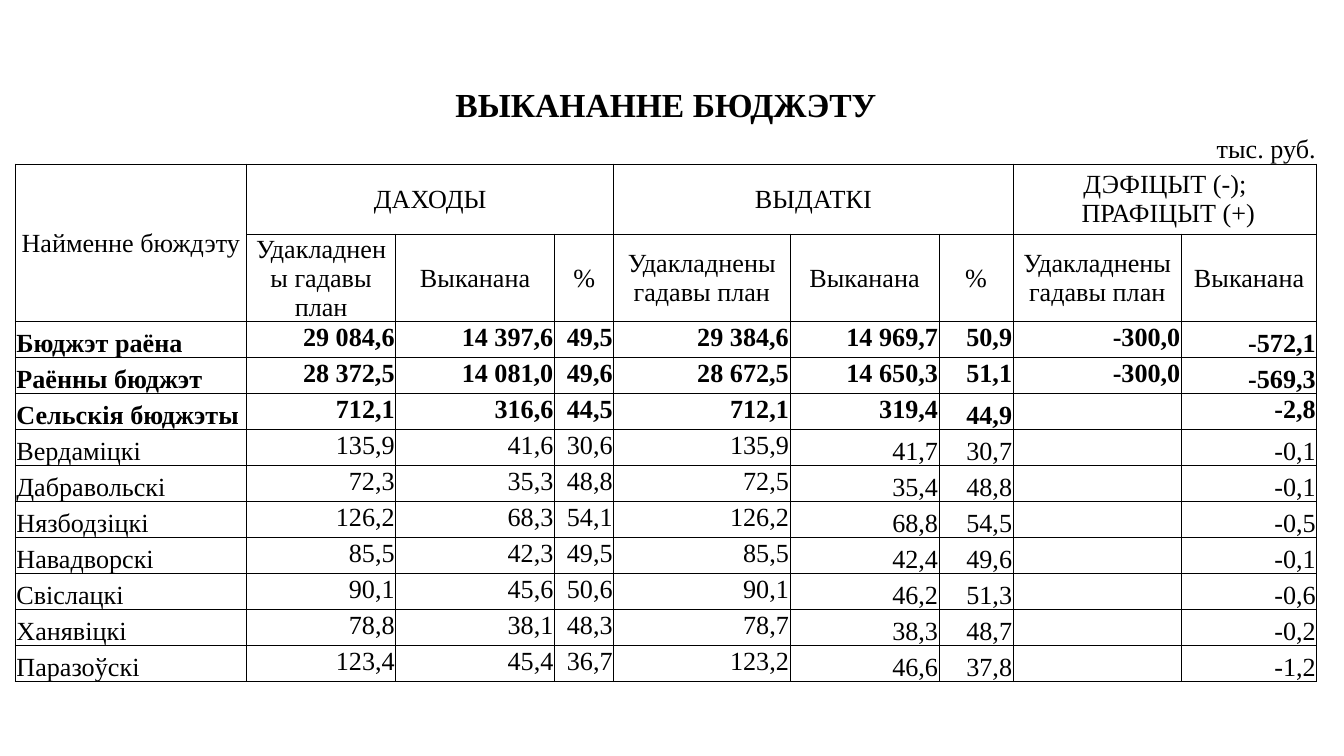
from dataclasses import dataclass

from lxml import etree
from pptx import Presentation
from pptx.dml.color import RGBColor
from pptx.enum.text import MSO_ANCHOR, PP_ALIGN
from pptx.oxml.ns import qn
from pptx.table import Table, _Cell
from pptx.util import Cm, Pt

TOP, MIDDLE, BOTTOM = MSO_ANCHOR.TOP, MSO_ANCHOR.MIDDLE, MSO_ANCHOR.BOTTOM
LEFT, CENTER, RIGHT = PP_ALIGN.LEFT, PP_ALIGN.CENTER, PP_ALIGN.RIGHT

COLORS = {"text": "000000", "border": "000000"}
FONT = "Times New Roman"
TITLE_SIZE, BODY_SIZE = 18, 14
ALL_SIDES = ("lnL", "lnR", "lnT", "lnB")

COLUMN_WIDTHS = (4.37, 2.54, 0.28, 1.98, 1.02, 1.12, 3.33, 2.26, 0.56, 1.4, 3.18, 0.3, 2.26)
TITLE_ROW, UNIT_ROW, GROUP_ROW, HEADING_ROW, FIRST_BUDGET_ROW = range(5)
HEADER_HEIGHTS = (0.87, 0.68, 1.32, 1.6)
BUDGET_HEIGHT = 0.68
FIELD_SPANS = ((0, 0), (1, 2), (3, 4), (5, 5), (6, 6), (7, 8), (9, 9), (10, 10), (11, 12))
UNIT_SPANS = ((2, 3), (4, 5), (8, 9), (10, 11))

PLAN, DONE = "Удакладнены гадавы план", "Выканана"
HEADINGS = (PLAN, DONE, "%", PLAN, DONE, "%", PLAN, DONE)
GROUPS = (
    ("ДАХОДЫ", 1, 5),
    ("ВЫДАТКІ", 6, 9),
    ("ДЭФІЦЫТ (-);\n ПРАФІЦЫТ (+)", 10, 12),
)


@dataclass
class Budget:
    name: str
    values: tuple[str, ...]
    bold: bool = False
    bottom_fields: tuple[int, ...] = (5, 6, 8)


BUDGETS = (
    Budget("Бюджэт раёна", ("29 084,6", "14 397,6", "49,5", "29 384,6", "14 969,7", "50,9", "-300,0", "-572,1"), True, (8,)),
    Budget("Раённы бюджэт", ("28 372,5", "14 081,0", "49,6", "28 672,5", "14 650,3", "51,1", "-300,0", "-569,3"), True, (8,)),
    Budget("Сельскія бюджэты", ("712,1", "316,6", "44,5", "712,1", "319,4", "44,9", "", "-2,8"), True, (6,)),
    Budget("Вердаміцкі", ("135,9", "41,6", "30,6", "135,9", "41,7", "30,7", "", "-0,1")),
    Budget("Дабравольскі", ("72,3", "35,3", "48,8", "72,5", "35,4", "48,8", "", "-0,1")),
    Budget("Нязбодзіцкі", ("126,2", "68,3", "54,1", "126,2", "68,8", "54,5", "", "-0,5")),
    Budget("Навадворскі", ("85,5", "42,3", "49,5", "85,5", "42,4", "49,6", "", "-0,1")),
    Budget("Свіслацкі", ("90,1", "45,6", "50,6", "90,1", "46,2", "51,3", "", "-0,6")),
    Budget("Ханявіцкі", ("78,8", "38,1", "48,3", "78,7", "38,3", "48,7", "", "-0,2")),
    Budget("Паразоўскі", ("123,4", "45,4", "36,7", "123,2", "46,6", "37,8", "", "-1,2")),
)


def set_borders(cell: _Cell, visible_sides: tuple[str, ...]) -> None:
    properties = cell._tc.get_or_add_tcPr()
    for side in ALL_SIDES:
        line = etree.SubElement(properties, qn(f"a:{side}"), w=str(Pt(0.5)))
        if side in visible_sides:
            fill = etree.SubElement(line, qn("a:solidFill"))
            etree.SubElement(fill, qn("a:srgbClr"), val=COLORS["border"])
        else:
            etree.SubElement(line, qn("a:noFill"))


def prepare_cell(cell: _Cell, visible_sides: tuple[str, ...]) -> None:
    set_borders(cell, visible_sides)
    cell.fill.background()
    cell.margin_left = cell.margin_right = cell.margin_top = Cm(0.02)
    cell.margin_bottom = 0
    end_properties = cell.text_frame.paragraphs[0]._p.get_or_add_endParaRPr()
    end_properties.set("sz", str(BODY_SIZE * 100))


def write_cell(cell: _Cell, text: str, alignment: PP_ALIGN, anchor: MSO_ANCHOR,
               bold: bool = False, size: int = BODY_SIZE) -> None:
    if not text:
        return
    cell.text_frame.text = text
    cell.vertical_anchor = anchor
    for paragraph in cell.text_frame.paragraphs:
        paragraph.alignment = alignment
        for run in paragraph.runs:
            run.font.name = FONT
            run.font.size = Pt(size)
            run.font.bold = bold
            run.font.color.rgb = RGBColor.from_string(COLORS["text"])


def merge_columns(table: Table, row: int, first: int, last: int) -> _Cell:
    cell = table.cell(row, first)
    if last > first:
        cell.merge(table.cell(row, last))
    return cell


def fill_header(table: Table) -> None:
    title = merge_columns(table, TITLE_ROW, 0, len(COLUMN_WIDTHS) - 1)
    write_cell(title, "ВЫКАНАННЕ БЮДЖЭТУ", CENTER, MIDDLE, True, TITLE_SIZE)
    for first, last in UNIT_SPANS:
        merge_columns(table, UNIT_ROW, first, last)
    write_cell(table.cell(UNIT_ROW, len(COLUMN_WIDTHS) - 1), "тыс. руб.", RIGHT, BOTTOM)
    name_heading = table.cell(GROUP_ROW, 0)
    name_heading.merge(table.cell(HEADING_ROW, 0))
    write_cell(name_heading, "Найменне бюждэту", CENTER, MIDDLE)
    for text, first, last in GROUPS:
        write_cell(merge_columns(table, GROUP_ROW, first, last), text, CENTER, MIDDLE)
    for text, (first, last) in zip(HEADINGS, FIELD_SPANS[1:]):
        write_cell(merge_columns(table, HEADING_ROW, first, last), text, CENTER, MIDDLE)


def fill_budget(table: Table, row: int, budget: Budget) -> None:
    for field, (text, (first, last)) in enumerate(zip((budget.name, *budget.values), FIELD_SPANS)):
        cell = merge_columns(table, row, first, last)
        alignment = RIGHT if field else LEFT
        anchor = BOTTOM if field in (0, *budget.bottom_fields) else TOP
        write_cell(cell, text, alignment, anchor, budget.bold)


def main() -> None:
    presentation = Presentation()
    presentation.slide_width, presentation.slide_height = Cm(25.4), Cm(14.28)
    slide = presentation.slides.add_slide(presentation.slide_layouts[6])
    heights = HEADER_HEIGHTS + (BUDGET_HEIGHT,) * len(BUDGETS)
    table = slide.shapes.add_table(
        len(heights), len(COLUMN_WIDTHS), Cm(0.29), Cm(1.55),
        Cm(sum(COLUMN_WIDTHS)), Cm(sum(heights)),
    ).table
    table.first_row = table.horz_banding = False
    for column, width in zip(table.columns, COLUMN_WIDTHS):
        column.width = Cm(width)
    visible_sides = {TITLE_ROW: (), UNIT_ROW: ("lnB",)}
    for index, (row, height) in enumerate(zip(table.rows, heights)):
        row.height = Cm(height)
        for cell in row.cells:
            prepare_cell(cell, visible_sides.get(index, ALL_SIDES))
    fill_header(table)
    for row_index, budget in enumerate(BUDGETS, FIRST_BUDGET_ROW):
        fill_budget(table, row_index, budget)
    presentation.save("out.pptx")


if __name__ == "__main__":
    main()
